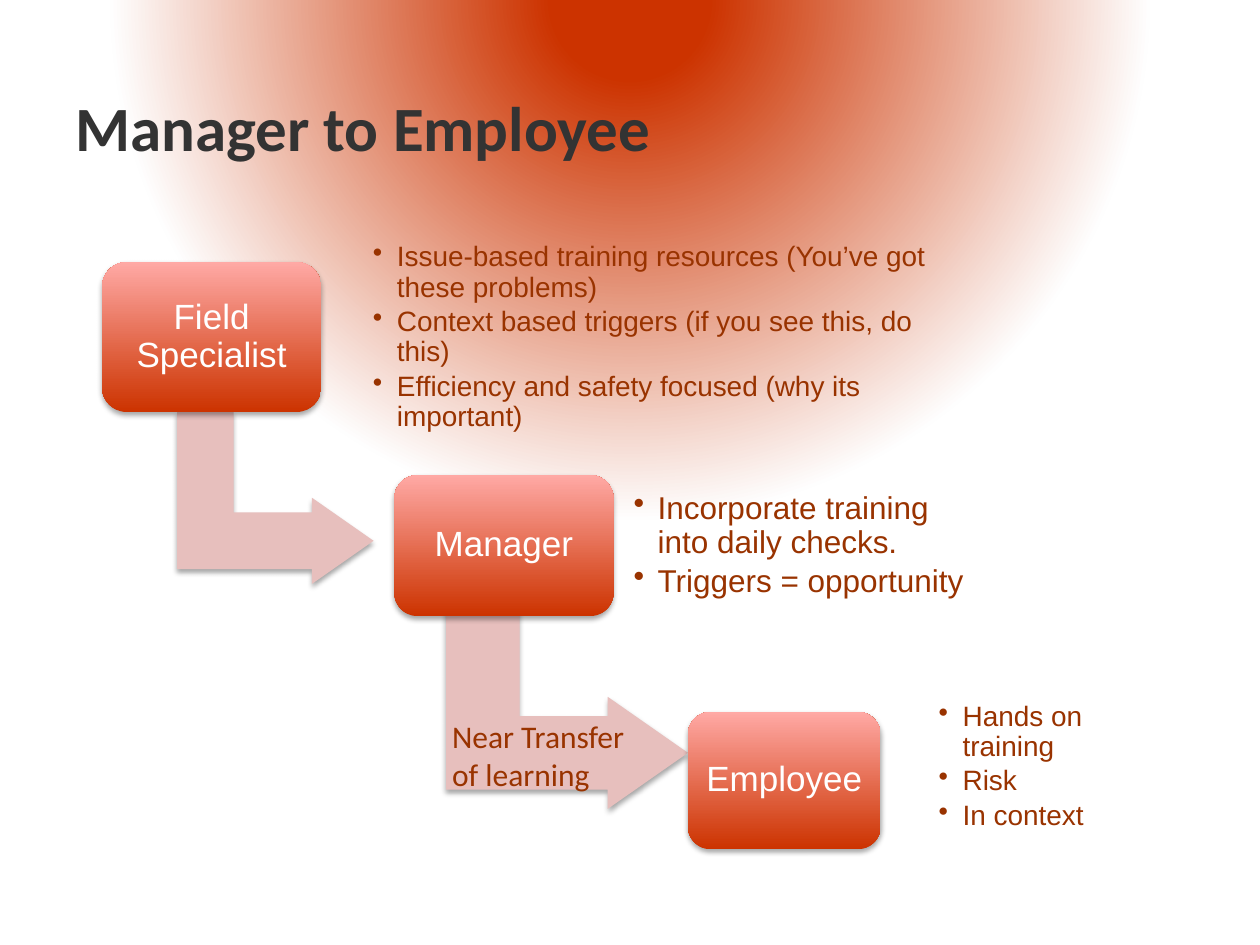
from lxml import etree
from pptx import Presentation
from pptx.dml.color import RGBColor
from pptx.enum.shapes import MSO_SHAPE
from pptx.enum.text import MSO_ANCHOR, PP_ALIGN
from pptx.oxml import parse_xml
from pptx.oxml.ns import qn
from pptx.util import Emu, Inches, Pt

CARD, ARROW = MSO_SHAPE.ROUNDED_RECTANGLE, MSO_SHAPE.BENT_UP_ARROW
TOP, MIDDLE, CENTER = MSO_ANCHOR.TOP, MSO_ANCHOR.MIDDLE, PP_ALIGN.CENTER
COLUMNS, ROWS = 100, 75
RED, PINK, PALE, RUST, DARK, WHITE = "CC3300", "FFA9A5", "E7BFBD", "993300", "333333", "FFFFFF"
DRAWING = 'xmlns:a="http://schemas.openxmlformats.org/drawingml/2006/main"'
SLIDE = 'xmlns:p="http://schemas.openxmlformats.org/presentationml/2006/main"'


def rgb(value):
    return RGBColor.from_string(value)


class Deck:
    """Holds the style and the current slide; places are columns and rows."""

    def __init__(self):
        self.presentation = Presentation()
        self.presentation.slide_width = Inches(10)
        self.presentation.slide_height = Inches(7.5)
        self.column = self.presentation.slide_width / COLUMNS
        self.row = self.presentation.slide_height / ROWS
        self.slide = self.presentation.slides.add_slide(self.presentation.slide_layouts[6])

    def place(self, left, top, width, height):
        return (Emu(round(left * self.column)), Emu(round(top * self.row)),
                Emu(round(width * self.column)), Emu(round(height * self.row)))

    def glow(self, stops):
        marks = "".join(f'<a:gs pos="{share * 1000}"><a:srgbClr val="{color}"/></a:gs>'
                        for share, color in stops)
        background = parse_xml(
            f'<p:bg {SLIDE} {DRAWING}><p:bgPr><a:gradFill rotWithShape="1"><a:gsLst>{marks}</a:gsLst>'
            '<a:path path="circle"><a:fillToRect l="50000" t="-80000" r="50000" b="180000"/></a:path>'
            '</a:gradFill><a:effectLst/></p:bgPr></p:bg>')
        self.slide.element.cSld.insert(0, background)

    def shape(self, kind, place, adjustments):
        shape = self.slide.shapes.add_shape(kind, *self.place(*place))
        for index, share in enumerate(adjustments):
            shape.adjustments[index] = share
        shape.line.fill.background()
        shape.element.spPr.append(parse_xml(
            f'<a:effectLst {DRAWING}><a:outerShdw blurRad="{Pt(3.1)}" dist="{Pt(1.8)}" dir="5400000" '
            'rotWithShape="0"><a:srgbClr val="000000"><a:alpha val="35000"/></a:srgbClr>'
            '</a:outerShdw></a:effectLst>'))
        return shape

    def arrow(self, place):
        arrow = self.shape(ARROW, place, (0.328, 0.25, 0.358))
        arrow.rotation = 90
        arrow.fill.solid()
        arrow.fill.fore_color.rgb = rgb(PALE)

    def card(self, place, role):
        card = self.shape(CARD, place, (0.167,))
        card.fill.gradient()
        card.fill.gradient_angle = 90
        for stop, color in zip(card.fill.gradient_stops, (RED, PINK)):
            stop.color.rgb = rgb(color)
        self.set_text(card.text_frame, role, 20, "Arial", WHITE, inset=0.08)
        paragraph = card.text_frame.paragraphs[0]
        paragraph.alignment, paragraph.line_spacing = CENTER, 0.9

    def set_text(self, frame, text, size, font, color, inset=None, anchor=MIDDLE, wrap=True, bold=False):
        frame.text = text
        frame.word_wrap, frame.vertical_anchor = wrap, anchor
        if inset is not None:
            frame.margin_left = frame.margin_right = Inches(inset)
            frame.margin_top = frame.margin_bottom = Inches(inset)
        for paragraph in frame.paragraphs:
            for run in paragraph.runs:
                run.font.size, run.font.name, run.font.bold = Pt(size), font, bold
                run.font.color.rgb = rgb(color)

    def label(self, place, text, size, color, **style):
        box = self.slide.shapes.add_textbox(*self.place(*place))
        self.set_text(box.text_frame, text, size, "Calibri", color, **style)

    def bullets(self, place, points, size, inset, bottom):
        frame = self.slide.shapes.add_textbox(*self.place(*place)).text_frame
        self.set_text(frame, "\n".join(points), size, "Arial", RUST, inset=inset)
        frame.margin_bottom = Inches(bottom)
        for paragraph in frame.paragraphs:
            paragraph.level = 1
            paragraph.line_spacing, paragraph.space_after = 0.9, Pt(size * 0.15)
            properties = paragraph._p.get_or_add_pPr()
            properties.set("marL", str(Inches(0.19)))
            properties.set("indent", str(-Inches(0.19)))
            etree.SubElement(properties, qn("a:buChar")).set("char", "•")


def main():
    deck = Deck()
    deck.glow(((10, RED), (66, "FEFEFE"), (100, WHITE)))
    deck.label((5, 5, 73.3, 10), "Manager to Employee", 36, DARK, bold=True)

    steps = (
        ("Field Specialist", (8.1, 20.8, 17.4, 11.9), (15, 31.7, 13.7, 15.6),
         (28.9, 20.3, 47.8, 13), 16, 0.07, 0.07,
         ("Issue-based training resources (You’ve got these problems)",
          "Context based triggers (if you see this, do this)",
          "Efficiency and safety focused (why its important)")),
        ("Manager", (31.3, 37.7, 17.4, 11.2), (36.1, 45.7, 17.8, 19.2),
         (49.3, 36.8, 28.9, 13), 18, 0.1, 0.1,
         ("Incorporate training into daily checks.", "Triggers = opportunity")),
        ("Employee", (54.6, 56.5, 15.3, 10.9), None,
         (73.8, 55.5, 16.8, 13), 16, 0.07, 0.3,
         ("Hands on training", "Risk", "In context")),
    )
    for role, card, arrow, notes, size, inset, bottom, points in steps:
        if arrow:
            deck.arrow(arrow)
        deck.card(card, role)
        deck.bullets(notes, points, size, inset, bottom)

    deck.label((34.9, 56.4, 16.1, 7.1), "Near Transfer\nof learning", 18, RUST, anchor=TOP, wrap=False)
    deck.presentation.save("out.pptx")


if __name__ == "__main__":
    main()
